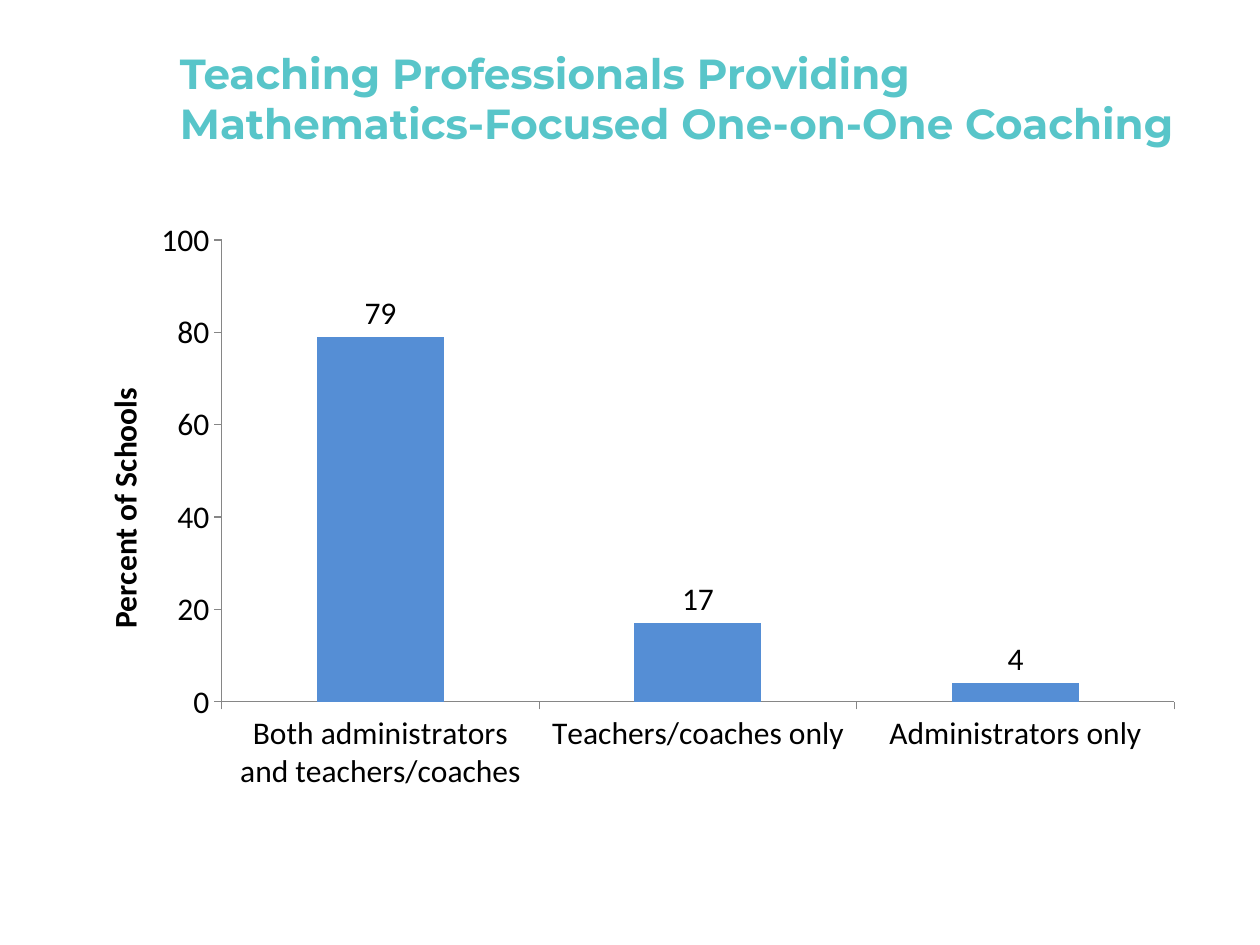
from lxml import etree
from pptx import Presentation
from pptx import util as u
from pptx.chart import data
from pptx.dml.color import RGBColor
from pptx.enum import chart as charts, text
from pptx.oxml import ns

TEAL = RGBColor(0x58, 0xC5, 0xC9)
BLUE = RGBColor(0x55, 0x8E, 0xD5)
GRAY = RGBColor(0x86, 0x86, 0x86)
BLACK = RGBColor(0, 0, 0)


def set_layout(element, position, **settings):
    """Give a chart element a manual layout, as fractions of the chart."""
    for old in element.findall(ns.qn("c:layout")):
        element.remove(old)
    layout = etree.Element(ns.qn("c:layout"))
    manual = etree.SubElement(layout, ns.qn("c:manualLayout"))
    for name, value in settings.items():
        etree.SubElement(manual, ns.qn(f"c:{name}")).set("val", str(value))
    element.insert(position, layout)


def add_title(slide, left, top, width, height):
    """Add the slide heading in the given box."""
    frame = slide.shapes.add_textbox(left, top, width, height).text_frame
    frame.word_wrap = True
    frame.vertical_anchor = text.MSO_ANCHOR.MIDDLE
    run = frame.paragraphs[0].add_run()
    run.text = "Teaching Professionals Providing Mathematics-Focused One-on-One Coaching"
    run.font.name = "Montserrat"
    run.font.size = u.Pt(24)
    run.font.bold = True
    run.font.color.rgb = TEAL


def style_axes(chart):
    """Set the scale, ticks, lines and title of both axes."""
    for axis in (chart.category_axis, chart.value_axis):
        axis.has_major_gridlines = False
        axis.major_tick_mark = charts.XL_TICK_MARK.OUTSIDE
        axis.minor_tick_mark = charts.XL_TICK_MARK.NONE
        axis.format.line.color.rgb = GRAY
        axis.format.line.width = u.Pt(0.75)
        axis.tick_labels.font.size = u.Pt(18)
    values = chart.value_axis
    values.minimum_scale, values.maximum_scale = 0, 100
    values.major_unit = 20
    run = values.axis_title.text_frame.paragraphs[0].add_run()
    run.text = "Percent of Schools"
    run.font.name = "Calibri"
    run.font.size = u.Pt(18)
    run.font.bold = True
    run.font.color.rgb = BLACK
    title = values.axis_title._element
    set_layout(title, 1, xMode="edge", yMode="edge", x=0.03, y=0.29)


def add_coaching_chart(slide, left, top, width, height):
    """Add the column chart of coaching providers in the given box."""
    chart_data = data.CategoryChartData()
    chart_data.categories = [
        "Both administrators and teachers/coaches",
        "Teachers/coaches only",
        "Administrators only",
    ]
    chart_data.add_series("Series 1", (79, 17, 4))
    chart = slide.shapes.add_chart(
        charts.XL_CHART_TYPE.COLUMN_CLUSTERED, left, top, width, height, chart_data
    ).chart
    chart.has_legend = False
    chart.has_title = False
    chart.font.name = "Calibri"
    chart.font.size = u.Pt(18)
    chart.font.color.rgb = BLACK
    style_axes(chart)

    plot = chart.plots[0]
    plot.vary_by_categories = False
    plot.gap_width = 150
    series = plot.series[0]
    series.format.fill.solid()
    series.format.fill.fore_color.rgb = BLUE
    labels = series.data_labels
    labels.show_value = True
    labels.position = charts.XL_LABEL_POSITION.OUTSIDE_END
    plot_area = chart._chartSpace.chart.plotArea
    set_layout(plot_area, 0, layoutTarget="inner", xMode="edge", yMode="edge",
               x=0.14, y=0.05, w=0.84, h=0.78)


def main():
    """Build the slide and save it."""
    presentation = Presentation()
    presentation.slide_width = u.Inches(10)
    presentation.slide_height = u.Inches(7.5)
    slide = presentation.slides.add_slide(presentation.slide_layouts[6])
    add_coaching_chart(slide, u.Inches(0.5), u.Inches(1.67), u.Inches(9), u.Inches(4.7))
    add_title(slide, u.Inches(1.33), u.Inches(0.3), u.Inches(8.17), u.Inches(0.95))
    presentation.save("out.pptx")


if __name__ == "__main__":
    main()
